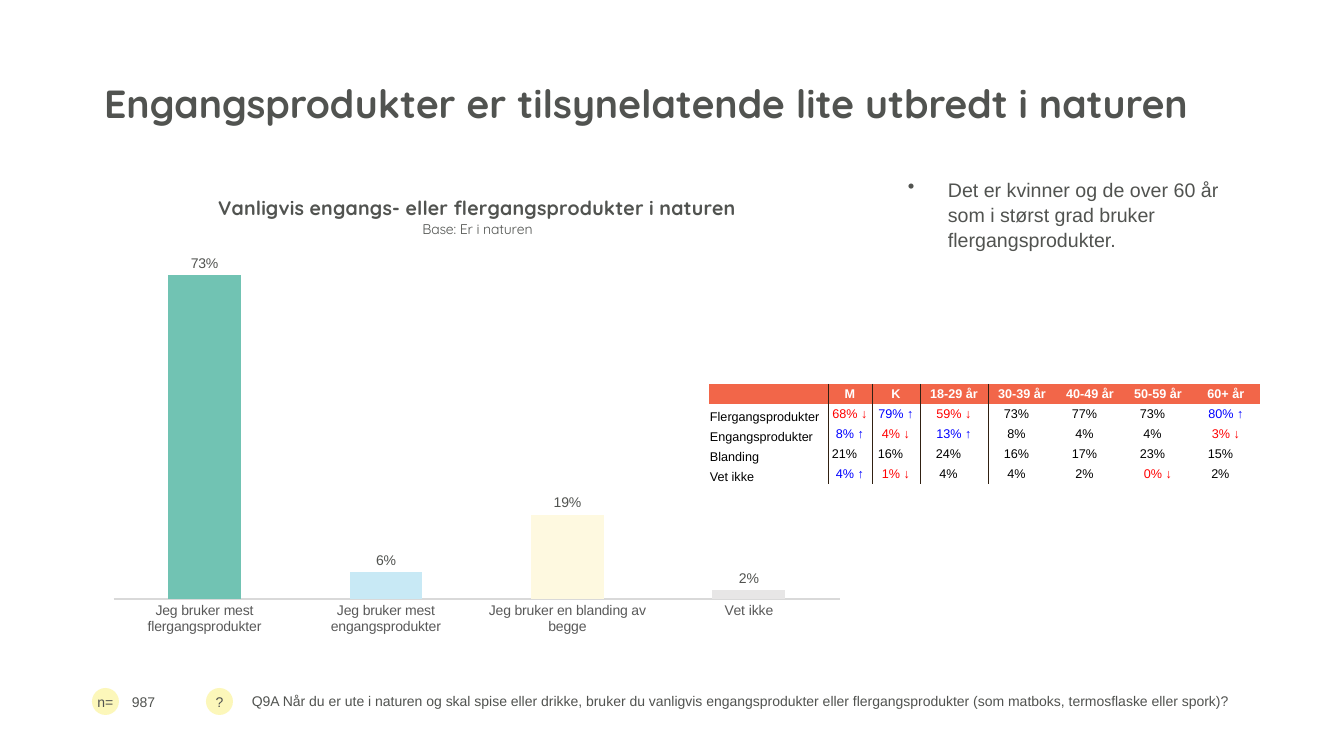
from lxml.etree import SubElement
from pptx import Presentation
from pptx.chart.data import CategoryChartData
from pptx.dml.color import RGBColor
from pptx.enum.chart import XL_CHART_TYPE, XL_LABEL_POSITION, XL_TICK_LABEL_POSITION, XL_TICK_MARK
from pptx.enum.shapes import MSO_SHAPE
from pptx.enum.text import MSO_ANCHOR, MSO_AUTO_SIZE, PP_ALIGN
from pptx.oxml import parse_xml
from pptx.oxml.ns import nsdecls, qn
from pptx.util import Pt

GREY = "515350"
HEAD = ["", "M", "K", "18-29 år", "30-39 år", "40-49 år", "50-59 år", "60+ år"]
ROWS = [
    ["Flergangsprodukter", "68% ↓", "79% ↑", "59% ↓", "73%", "77%", "73%", "80% ↑"],
    ["Engangsprodukter", "8% ↑", "4% ↓", "13% ↑", "8%", "4%", "4%", "3% ↓"],
    ["Blanding", "21%", "16%", "24%", "16%", "17%", "23%", "15%"],
    ["Vet ikke", "4% ↑", "1% ↓", "4%", "4%", "2%", "0% ↓", "2%"],
]
WIDTHS = [119, 44, 48] + [68] * 5
BARS = [
    ("Jeg bruker mest flergangsprodukter", 0.73, "71C3B3"),
    ("Jeg bruker mest engangsprodukter", 0.06, "C8E9F5"),
    ("Jeg bruker en blanding av begge", 0.19, "FEF9E0"),
    ("Vet ikke", 0.02, "E7E6E6"),
]


def px(n):
    return round(n * 914400 / 100.8)


def rgb(code):
    return RGBColor.from_string(code)


def style(font, size, color=GREY, bold=False, name="Arial"):
    font.size = Pt(size)
    font.name = name
    font.bold = bold
    font.color.rgb = rgb(color)


def set_title(slide, box):
    title = slide.shapes.title
    title.left, title.top, title.width, title.height = map(px, box)
    frame = title.text_frame
    frame.text = "Engangsprodukter er tilsynelatende lite utbredt i naturen"
    frame.auto_size = MSO_AUTO_SIZE.NONE
    frame.vertical_anchor = MSO_ANCHOR.BOTTOM
    para = frame.paragraphs[0]
    para.alignment = PP_ALIGN.LEFT
    para.line_spacing = 0.9
    style(para.font, 28, bold=True, name="Quicksand")


def add_text(slide, box, text, size, anchor=MSO_ANCHOR.MIDDLE):
    frame = slide.shapes.add_textbox(*map(px, box)).text_frame
    frame.word_wrap = True
    frame.vertical_anchor = anchor
    para = frame.paragraphs[0]
    para.text = text
    style(para.font, size)
    return para


def add_point(slide, box):
    text = "Det er kvinner og de over 60 år som i størst grad bruker flergangsprodukter."
    para = add_text(slide, box, text, 14, MSO_ANCHOR.TOP)
    props = para._p.get_or_add_pPr()
    props.set("marL", str(px(40)))
    props.set("indent", str(-px(40)))
    props.insert(0, parse_xml(f'<a:buChar {nsdecls("a")} char="•"/>'))
    para.line_spacing = 1.07


def place(node, index, **spots):
    old = node.find(qn("c:layout"))
    if old is not None:
        node.remove(old)
    layout = parse_xml(f'<c:layout {nsdecls("c")}><c:manualLayout/></c:layout>')
    for tag, val in spots.items():
        SubElement(layout[0], qn("c:" + tag), val=str(val))
    node.insert(index, layout)


def add_bars(slide, box):
    names, vals, fills = zip(*BARS)
    data = CategoryChartData(number_format="0%")
    data.categories = names
    data.add_series("Series 1", vals)
    chart = slide.shapes.add_chart(XL_CHART_TYPE.COLUMN_CLUSTERED, *map(px, box), data).chart
    style(chart.font, 10)
    chart.has_legend = False

    frame = chart.chart_title.text_frame
    frame.text = "Vanligvis engangs- eller flergangsprodukter i naturen\nBase: Er i naturen"
    for para, size, bold in zip(frame.paragraphs, (14, 10), (True, False)):
        style(para.font, size, bold=bold, name="Quicksand")
    place(chart.chart_title._element, 1, xMode="edge", yMode="edge", x=0.16, y=0.04)
    area = chart._chartSpace.chart.plotArea
    place(area, 0, layoutTarget="inner", xMode="edge", yMode="edge",
          x=0.026, y=0.153, w=0.959, h=0.739)

    axis = chart.category_axis
    axis.major_tick_mark = XL_TICK_MARK.NONE
    axis.format.line.color.rgb = rgb("D9D9D9")
    axis.format.line.width = Pt(0.75)
    style(axis.tick_labels.font, 10, "595959")
    scale = chart.value_axis
    scale.minimum_scale, scale.maximum_scale = 0, 0.8
    scale.has_major_gridlines = False
    scale.tick_label_position = XL_TICK_LABEL_POSITION.NONE
    scale.visible = False

    plot = chart.plots[0]
    plot.gap_width = 150
    plot.vary_by_categories = False
    plot.has_data_labels = True
    labels = plot.data_labels
    labels.show_value = True
    labels.number_format = "0%"
    labels.number_format_is_linked = False
    labels.position = XL_LABEL_POSITION.OUTSIDE_END
    style(labels.font, 10)
    for i, color in enumerate(fills):
        fill = plot.series[0].points[i].format.fill
        fill.solid()
        fill.fore_color.rgb = rgb(color)


def add_edge(cell, side):
    line = SubElement(cell._tc.get_or_add_tcPr(), qn("a:" + side), w=str(Pt(0.5)))
    fill = SubElement(line, qn("a:solidFill"))
    SubElement(fill, qn("a:srgbClr"), val="302012")


def fill_cell(cell, text, row, col):
    plain = row > 0 and col > 0 and text.endswith("%")
    cell.margin_left = cell.margin_top = px(1)
    cell.margin_right = px(12 if plain else 1)
    cell.margin_bottom = 0
    label = row > 0 and col == 0
    cell.vertical_anchor = MSO_ANCHOR.BOTTOM if label else MSO_ANCHOR.MIDDLE
    if col in (1, 3):
        add_edge(cell, "lnL")
    if col in (0, 2):
        add_edge(cell, "lnR")
    if row == 0:
        cell.fill.solid()
        cell.fill.fore_color.rgb = rgb("F26649")
    else:
        cell.fill.background()
    para = cell.text_frame.paragraphs[0]
    para.alignment = PP_ALIGN.LEFT if label else PP_ALIGN.CENTER
    color = "FFFFFF" if row == 0 else {"↓": "FF0000", "↑": "0000FF"}.get(text[-1], "000000")
    if text:
        para.text = text
    else:
        SubElement(para._p, qn("a:endParaRPr"), sz="900")
    style(para.font, 9, color, row == 0)


def add_grid(slide, left, top):
    rows = [HEAD] + ROWS
    table = slide.shapes.add_table(len(rows), len(HEAD), px(left), px(top),
                                   px(sum(WIDTHS)), px(20 * len(rows))).table
    table.first_row = table.horz_banding = False
    table._tbl.tblPr.find(qn("a:tableStyleId")).text = "{2D5ABB26-0587-4C30-8999-92F81FD0307C}"
    for col, width in enumerate(WIDTHS):
        table.columns[col].width = px(width)
    for r, texts in enumerate(rows):
        table.rows[r].height = px(20)
        for c, text in enumerate(texts):
            fill_cell(table.cell(r, c), text, r, c)


def add_badge(slide, left, top, text):
    dot = slide.shapes.add_shape(MSO_SHAPE.OVAL, px(left), px(top), px(27), px(27))
    dot.shadow.inherit = False
    dot.fill.solid()
    dot.fill.fore_color.rgb = rgb("FCF7BA")
    dot.line.fill.background()
    frame = dot.text_frame
    frame.margin_left = frame.margin_right = frame.margin_top = frame.margin_bottom = 0
    frame.word_wrap = False
    frame.vertical_anchor = MSO_ANCHOR.MIDDLE
    para = frame.paragraphs[0]
    para.text = text
    para.alignment = PP_ALIGN.CENTER
    style(para.font, 10)


def add_foot(slide, left, top):
    add_badge(slide, left, top, "n=")
    add_text(slide, (left + 30, top, 75, 27), "987", 10)
    add_badge(slide, left + 114, top, "?")
    add_text(slide, (left + 150, top - 16, 1013, 58),
             "Q9A Når du er ute i naturen og skal spise eller drikke, bruker du vanligvis "
             "engangsprodukter eller flergangsprodukter (som matboks, termosflaske eller spork)?", 10)


def main():
    deck = Presentation()
    deck.slide_width, deck.slide_height = px(1344), px(756)
    slide = deck.slides.add_slide(deck.slide_layouts[5])
    set_title(slide, (94, 39, 1161, 93))
    add_bars(slide, (94, 171, 757, 480))
    add_foot(slide, 92, 688)
    add_grid(slide, 709, 384)
    add_point(slide, (898, 171, 357, 185))
    deck.save("out.pptx")


if __name__ == "__main__":
    main()
